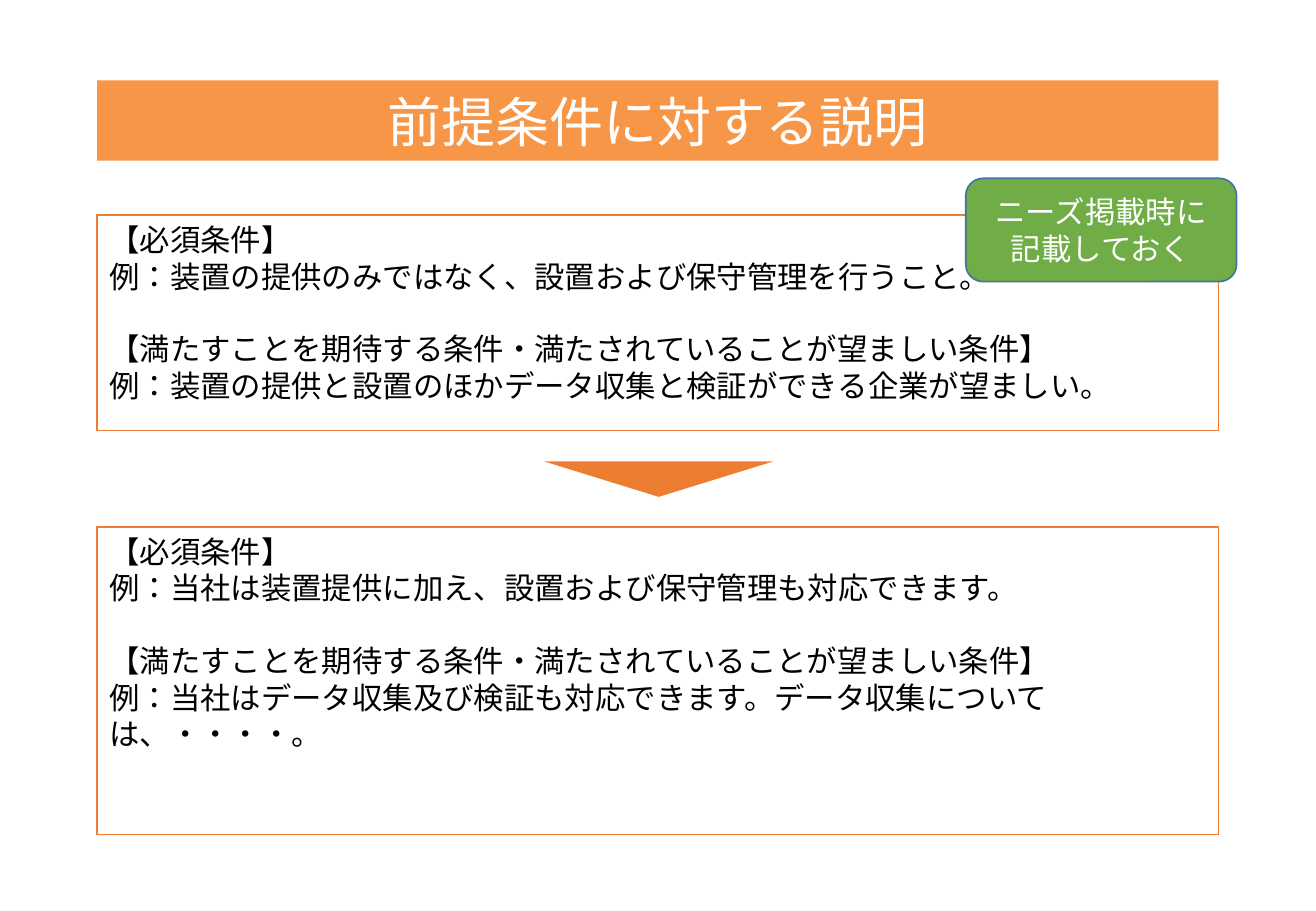
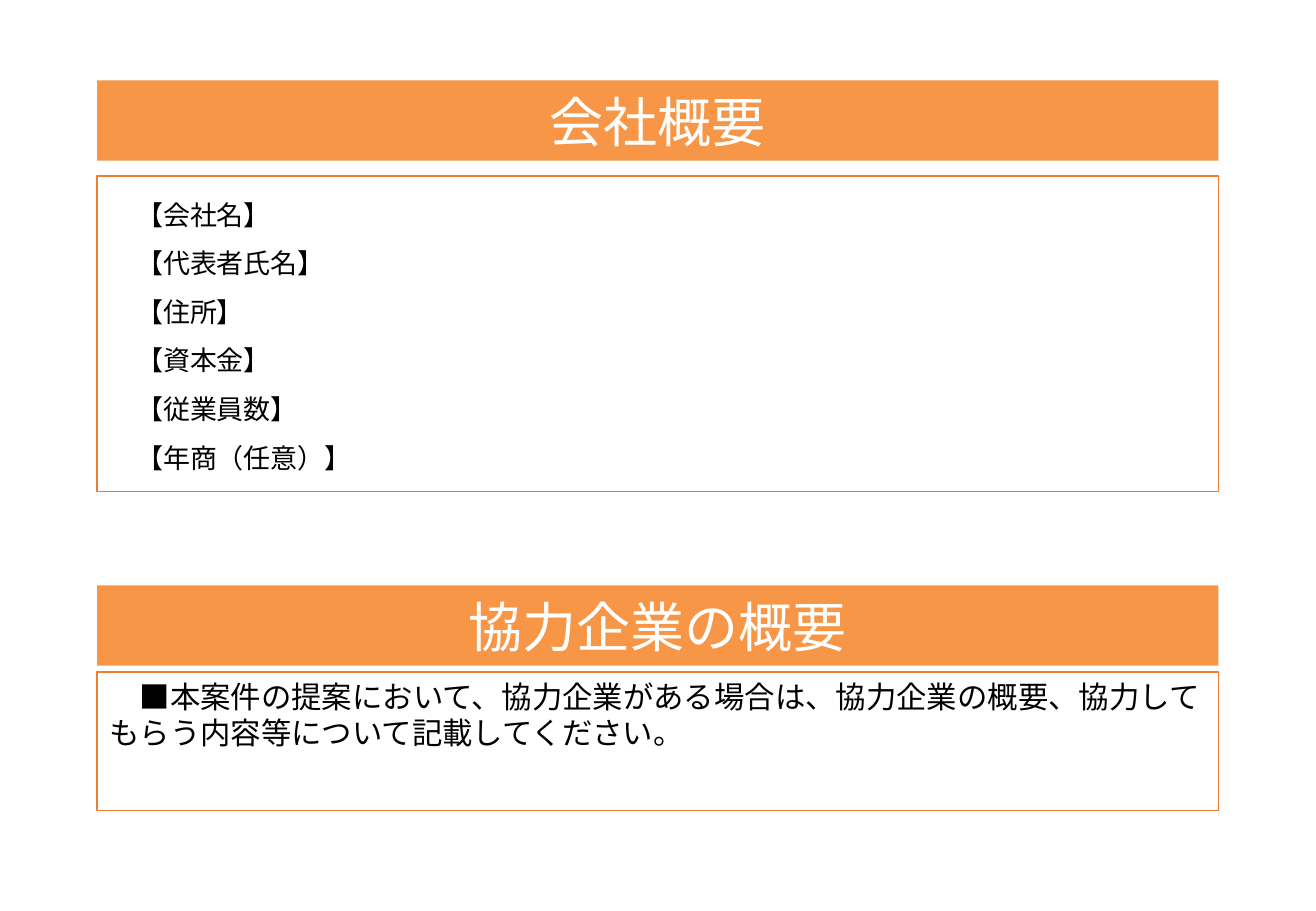
"""Build two proposal slides: answers to the preconditions, and company profiles."""
from lxml.etree import SubElement
from pptx import Presentation
from pptx.dml.color import RGBColor
from pptx.enum.lang import MSO_LANGUAGE_ID as Lang
from pptx.enum.shapes import MSO_SHAPE as Shape
from pptx.enum.text import MSO_ANCHOR as Anchor, MSO_AUTO_SIZE as AutoSize, PP_ALIGN as Align
from pptx.oxml.ns import qn
from pptx.util import Cm, Pt

FONT = "Noto Sans CJK JP"
BAND, ACCENT, GREEN, GREEN_EDGE = "F79646", "ED7D31", "70AD47", "43739E"
WHITE, BLACK = "FFFFFF", "000000"
LEFT, WIDTH = Cm(2.03), Cm(23.44)
BAND_TOP, BAND_HEIGHT = 1.68, 1.68


def paint(color_format, hex_color):
    """Set a colour from a hex string."""
    color_format.rgb = RGBColor.from_string(hex_color)


def write(shape, lines, size, color, fill, edge=None, align=Align.LEFT, anchor=Anchor.TOP, pitch=None):
    """Fill and outline a shape, then write one paragraph per line."""
    shape.fill.solid()
    paint(shape.fill.fore_color, fill)
    if edge:
        paint(shape.line.color, edge)
        shape.line.width = Pt(1)
    else:
        shape.line.fill.background()
    frame = shape.text_frame
    frame.word_wrap = True
    frame.auto_size = AutoSize.NONE
    frame.vertical_anchor = anchor
    for number, line in enumerate(lines):
        paragraph = frame.add_paragraph() if number else frame.paragraphs[0]
        paragraph.alignment = align
        paragraph.space_before = Pt(0)
        if pitch:
            paragraph.line_spacing = Pt(pitch)
        properties = paragraph._p.get_or_add_pPr()
        properties.set("marL", "0")
        properties.set("indent", "0")
        SubElement(properties, qn("a:buNone"))
        run = paragraph.add_run()
        run.text = line
        run.font.size = Pt(size)
        run.font.name = FONT
        run.font.language_id = Lang.JAPANESE
        paint(run.font.color, color)
        SubElement(run._r.get_or_add_rPr(), qn("a:ea"), typeface=FONT)


REQUIRED = "【必須条件】"
DESIRED = "【満たすことを期待する条件・満たされていることが望ましい条件】"
pages = [
    ("前提条件に対する説明", [
        (4.5, 4.5, 18, 21.6, [
            REQUIRED,
            "例：装置の提供のみではなく、設置および保守管理を行うこと。",
            DESIRED,
            "例：装置の提供と設置のほかデータ収集と検証ができる企業が望ましい。"]),
        (11.02, 6.43, 18, 21.6, [
            REQUIRED,
            "例：当社は装置提供に加え、設置および保守管理も対応できます。",
            DESIRED,
            "例：当社はデータ収集及び検証も対応できます。データ収集については、・・・・。"])]),
    ("会社概要", [
        (3.68, 6.6, 16, 28.8, [
            "【会社名】", "【代表者氏名】", "【住所】", "【資本金】", "【従業員数】", "【年商（任意）】"]),
        (14.05, 2.9, 18, 21.6, [
            "■本案件の提案において、協力企業がある場合は、協力企業の概要、"
            "協力してもらう内容等について記載してください。"])]),
]

deck = Presentation()
deck.slide_width, deck.slide_height = Cm(27.51), Cm(19.05)
slides, panels = [], []
for heading, sections in pages:
    slide = deck.slides.add_slide(deck.slide_layouts[3])
    slides.append(slide)
    title, *bodies = slide.placeholders
    title.left, title.top, title.width, title.height = LEFT, Cm(BAND_TOP), WIDTH, Cm(BAND_HEIGHT)
    write(title, [heading], 32, WHITE, BAND, align=Align.CENTER, anchor=Anchor.MIDDLE)
    for body, (top, height, size, pitch, lines) in zip(bodies, sections):
        body.left, body.top, body.width, body.height = LEFT, Cm(top), WIDTH, Cm(height)
        write(body, lines, size, BLACK, WHITE, ACCENT, pitch=pitch)
        panels.append(body)

conditions, profile = slides
needs, answers, company, partner = panels
for panel in (needs, answers):
    panel.text_frame.paragraphs[2].space_before = Pt(21.6)
for entry in company.text_frame.paragraphs:
    entry._p.pPr.set("marL", str(Pt(16)))
partner.text_frame.paragraphs[0]._p.pPr.set("indent", str(Pt(18)))

down_arrow = conditions.shapes.add_shape(Shape.ISOSCELES_TRIANGLE, Cm(11.38), Cm(9.65), Cm(4.78), Cm(0.74))
down_arrow.rotation = 180
down_arrow.shadow.inherit = False
down_arrow.fill.solid()
paint(down_arrow.fill.fore_color, ACCENT)
down_arrow.line.fill.background()

reminder = conditions.shapes.add_shape(Shape.ROUNDED_RECTANGLE, Cm(20.19), Cm(3.73), Cm(5.66), Cm(2.16))
reminder.shadow.inherit = False
write(reminder, ["ニーズ掲載時に", "記載しておく"], 18, WHITE, GREEN, GREEN_EDGE,
      Align.CENTER, Anchor.MIDDLE, 21.6)

partner_band = profile.shapes.add_shape(Shape.RECTANGLE, LEFT, Cm(12.24), WIDTH, Cm(BAND_HEIGHT))
partner_band.shadow.inherit = False
write(partner_band, ["協力企業の概要"], 32, WHITE, BAND, align=Align.CENTER, anchor=Anchor.MIDDLE)

deck.save("out.pptx")
